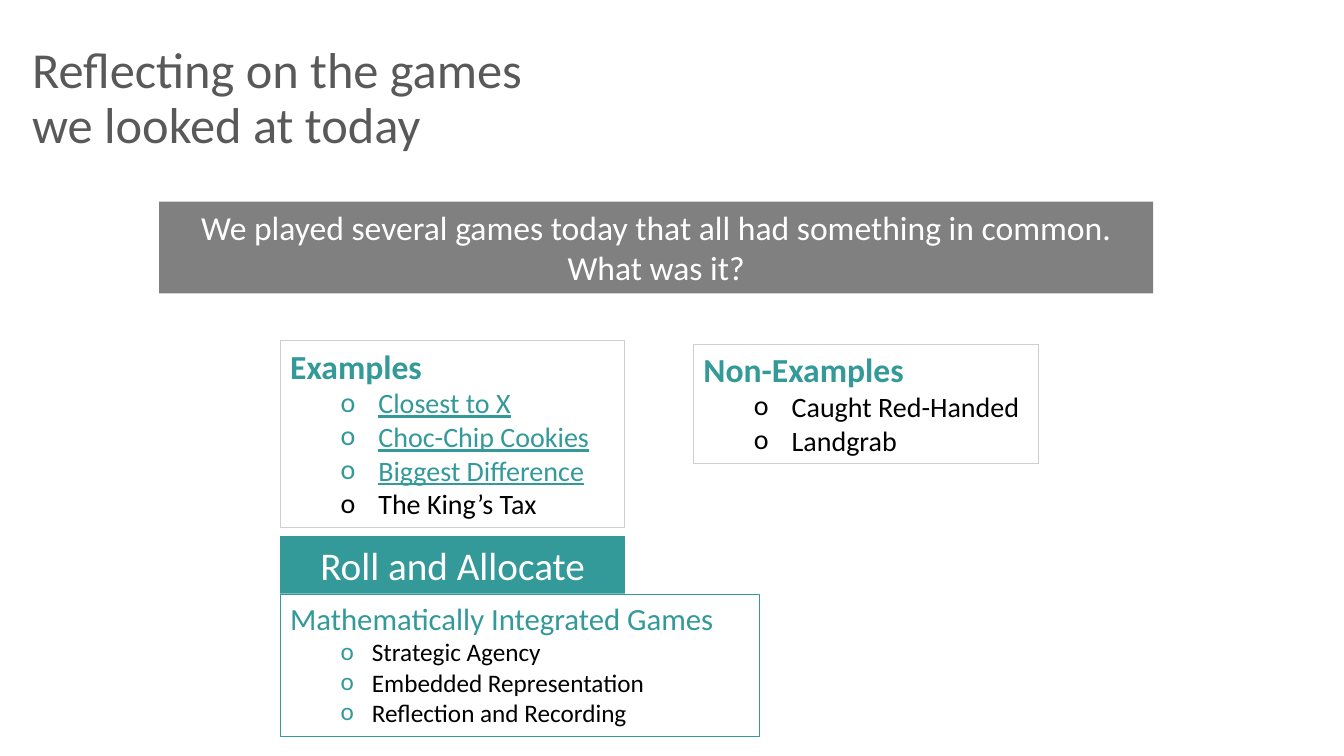
from dataclasses import dataclass
from typing import Optional

from lxml.etree import SubElement
from pptx import Presentation
from pptx.dml.color import RGBColor
from pptx.enum.shapes import MSO_SHAPE as Shape
from pptx.enum.text import MSO_ANCHOR as Anchor, PP_ALIGN as Align
from pptx.oxml.ns import qn
from pptx.util import Inches, Pt

# Grid: cells of a tenth of an inch
SLIDE_COLUMNS, SLIDE_ROWS = 133.33, 75
CELL = 0.1
INDENT_COLUMNS = 5  # where the bullets stand
EXAMPLES_LEFT, EXAMPLES_WIDTH = 27.8, 34.2

FONT = "Calibri"
WHITE = RGBColor(0xFF, 0xFF, 0xFF)
BLACK = RGBColor(0x00, 0x00, 0x00)
TEAL = RGBColor(0x33, 0x99, 0x99)
GREY = RGBColor(0x80, 0x80, 0x80)
DARK_GREY = RGBColor(0x59, 0x59, 0x59)
PALE_GREY = RGBColor(0xD0, 0xCE, 0xCE)

FRAME_FORMAT = {"word_wrap": True, "vertical_anchor": Anchor.TOP}


@dataclass(frozen=True)
class Line:
    text: str
    size: int
    color: RGBColor
    bold: bool = False
    underline: bool = False
    align: Align = Align.LEFT
    spacing: float = 1.0
    hang: float = 0  # columns between bullet and text; 0 means no bullet
    bullet_color: Optional[RGBColor] = None


@dataclass(frozen=True)
class Panel:
    left: float
    top: float
    width: float
    height: float
    lines: list[Line]
    fill: Optional[RGBColor] = None
    border: Optional[RGBColor] = None


def cells(count: float) -> int:
    return Inches(count * CELL)


def add_bullet(paragraph, line: Line) -> None:
    paragraph.level = 1
    props = paragraph._p.get_or_add_pPr()
    props.set("marL", str(cells(INDENT_COLUMNS + line.hang)))
    props.set("indent", str(-cells(line.hang)))
    color = SubElement(SubElement(props, qn("a:buClr")), qn("a:srgbClr"))
    color.set("val", str(line.bullet_color or line.color))
    SubElement(props, qn("a:buFont")).set("typeface", FONT)
    SubElement(props, qn("a:buChar")).set("char", "o")


def write_line(paragraph, line: Line) -> None:
    paragraph.alignment = line.align
    paragraph.line_spacing = line.spacing
    if line.hang:
        add_bullet(paragraph, line)
    run = paragraph.add_run()
    run.text = line.text
    font_format = {"name": FONT, "size": Pt(line.size),
                   "bold": line.bold, "underline": line.underline}
    for key, value in font_format.items():
        setattr(run.font, key, value)
    run.font.color.rgb = line.color


def draw_panel(slide, panel: Panel) -> None:
    place = [cells(n) for n in (panel.left, panel.top, panel.width, panel.height)]
    if panel.fill is None:
        box = slide.shapes.add_textbox(*place)
    else:
        box = slide.shapes.add_shape(Shape.RECTANGLE, *place)
        box.shadow.inherit = False
        box.fill.solid()
        box.fill.fore_color.rgb = panel.fill
        if panel.border is None:
            box.line.fill.background()
        else:
            box.line.color.rgb = panel.border
            box.line.width = Pt(0.75)
    frame = box.text_frame
    for key, value in FRAME_FORMAT.items():
        setattr(frame, key, value)
    for index, line in enumerate(panel.lines):
        paragraph = frame.add_paragraph() if index else frame.paragraphs[0]
        write_line(paragraph, line)


def game(name: str, linked: bool = False) -> Line:
    return Line(name, 20, TEAL if linked else BLACK, underline=linked, hang=3.75)


def feature(name: str) -> Line:
    return Line(name, 18, BLACK, hang=3.12, bullet_color=TEAL)


def centred(text: str, size: int) -> Line:
    return Line(text, size, WHITE, align=Align.CENTER)


PANELS = [
    # Title
    Panel(2.2, 4, 51.2, 14.5,
          [Line("Reflecting on the games we looked at today", 36, DARK_GREY,
                spacing=0.9)]),
    # Question banner
    Panel(15.8, 20, 98.6, 9.1,
          [centred("We played several games today that all had something in common.", 24),
           centred("What was it?", 24)],
          fill=GREY),
    # Games that fit
    Panel(EXAMPLES_LEFT, 33.8, EXAMPLES_WIDTH, 18.5,
          [Line("Examples", 24, TEAL, bold=True),
           game("Closest to X", linked=True),
           game("Choc-Chip Cookies", linked=True),
           game("Biggest Difference", linked=True),
           game("The King’s Tax")],
          fill=WHITE, border=PALE_GREY),
    # Games that do not fit
    Panel(68.8, 34.15, EXAMPLES_WIDTH, 11.8,
          [Line("Non-Examples", 24, TEAL, bold=True),
           game("Caught Red-Handed"),
           game("Landgrab")],
          fill=WHITE, border=PALE_GREY),
    # Answer
    Panel(EXAMPLES_LEFT, 53.2, EXAMPLES_WIDTH, 5.7,
          [centred("Roll and Allocate", 28)], fill=TEAL),
    # What the games share
    Panel(EXAMPLES_LEFT, 59, 47.6, 14.1,
          [Line("Mathematically Integrated Games", 22, TEAL),
           feature("Strategic Agency"),
           feature("Embedded Representation"),
           feature("Reflection and Recording")],
          fill=WHITE, border=TEAL),
]


def main() -> None:
    deck = Presentation()
    deck.slide_width = cells(SLIDE_COLUMNS)
    deck.slide_height = cells(SLIDE_ROWS)
    slide = deck.slides.add_slide(deck.slide_layouts[6])
    for panel in PANELS:
        draw_panel(slide, panel)
    deck.save("out.pptx")


if __name__ == "__main__":
    main()
